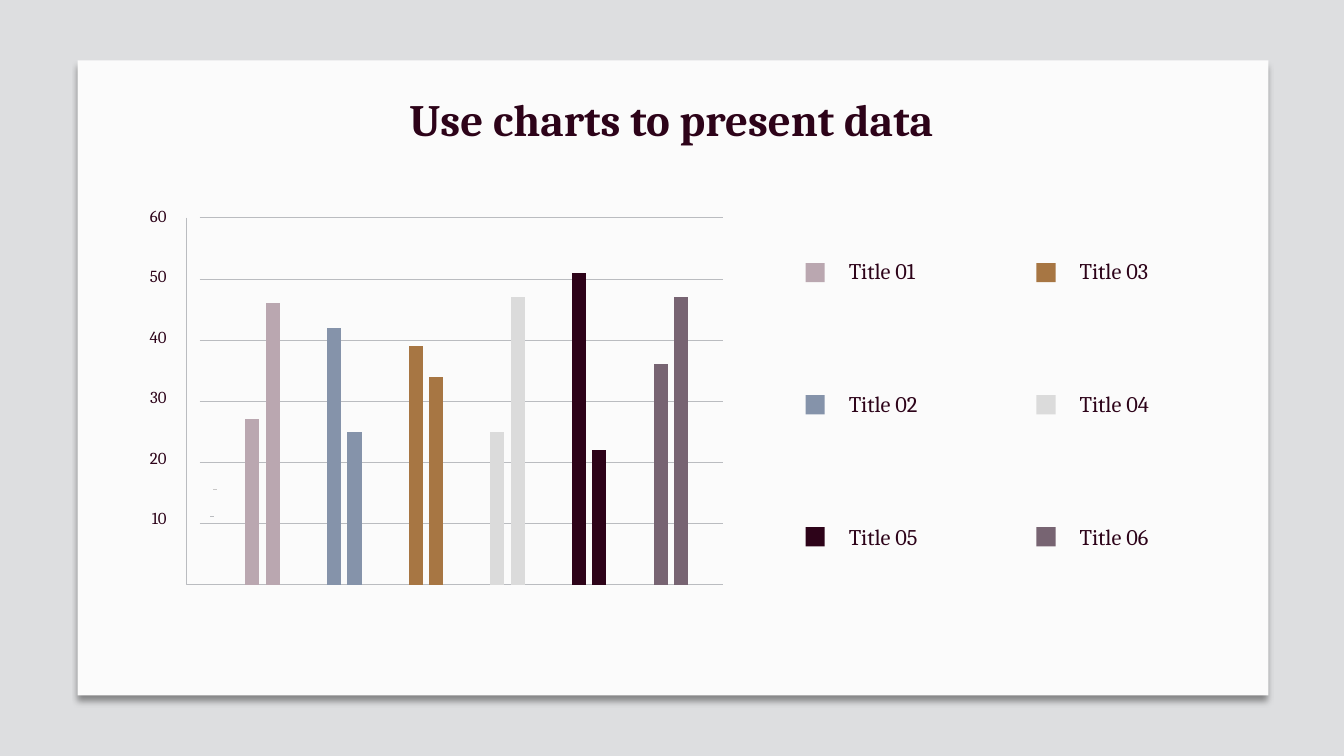
import pptx
import pptx.chart.data
import pptx.dml.color
import pptx.enum.chart
import pptx.enum.shapes
import pptx.enum.text
import pptx.oxml
import pptx.util
from pptx.util import Inches

FONT = "Cambria"
INK = "2D0319"
RULE = "BABCC0"
NAMESPACES = (
    'xmlns:a="http://schemas.openxmlformats.org/drawingml/2006/main" '
    'xmlns:c="http://schemas.openxmlformats.org/drawingml/2006/chart"'
)

# Category name, colour, first bar, second bar
CATEGORIES = [
    ("Title 01", "BAA7B0", 27, 46),
    ("Title 02", "8593AA", 42, 25),
    ("Title 03", "A77643", 39, 34),
    ("Title 04", "DBDBDB", 25, 47),
    ("Title 05", "2D0319", 51, 22),
    ("Title 06", "776472", 36, 47),
]
LEGEND_ROWS = [("Title 01", "Title 03"), ("Title 02", "Title 04"), ("Title 05", "Title 06")]

# Plot frame, in inches
AXIS_X, GRID_X, RIGHT_X = 1.85, 1.98, 7.17
TOP_Y, BASE_Y = 2.16, 5.8
SCALE_MAX, SCALE_STEP = 60, 10


def paint(fill, colour):
    fill.solid()
    fill.fore_color.rgb = pptx.dml.color.RGBColor.from_string(colour)


def xml(text):
    """Parse one element, given with a space where its namespaces go."""
    return pptx.oxml.parse_xml(text.replace("NS", NAMESPACES, 1))


def add_rectangle(page, left, top, width, height, colour):
    box = page.shapes.add_shape(
        pptx.enum.shapes.MSO_SHAPE.RECTANGLE,
        Inches(left), Inches(top), Inches(width), Inches(height))
    box.shadow.inherit = False
    paint(box.fill, colour)
    box.line.fill.background()
    return box


def add_line(page, start, end, colour, points):
    line = page.shapes.add_connector(
        pptx.enum.shapes.MSO_CONNECTOR.STRAIGHT, *map(Inches, start + end))
    paint(line.line.fill, colour)
    line.line.width = pptx.util.Pt(points)
    line._element.spPr.append(xml("<a:effectLst NS/>"))


def write(box, text, size, align, bold=False):
    para = box.text_frame.paragraphs[0]
    para.text = text
    para.alignment = align
    para.font.name = FONT
    para.font.size = pptx.util.Pt(size)
    para.font.bold = bold
    para.font.color.rgb = pptx.dml.color.RGBColor.from_string(INK)


def add_label(page, left, top, width, height, text, size, align):
    box = page.shapes.add_textbox(Inches(left), Inches(top), Inches(width), Inches(height))
    box.text_frame.word_wrap = True
    write(box, text, size, align)


def add_card(page):
    card = add_rectangle(page, 0.77, 0.6, 11.81, 6.3, "FBFBFB")
    effects = card._element.spPr.find(pptx.oxml.ns.qn("a:effectLst"))
    effects.append(xml(
        '<a:outerShdw NS blurRad="50800" dist="63500" dir="5400000" algn="t" rotWithShape="0">'
        '<a:srgbClr val="000000"><a:alpha val="40000"/></a:srgbClr></a:outerShdw>'))


def add_title(page):
    title = page.shapes.title
    title.left, title.top = Inches(3.99), Inches(0.91)
    title.width, title.height = Inches(5.34), Inches(0.54)
    frame = title.text_frame
    frame.margin_left = frame.margin_right = frame.margin_top = frame.margin_bottom = 0
    frame.vertical_anchor = pptx.enum.text.MSO_ANCHOR.MIDDLE
    frame.auto_size = pptx.enum.text.MSO_AUTO_SIZE.NONE
    frame.word_wrap = False
    write(title, "Use charts to present data", 32, pptx.enum.text.PP_ALIGN.CENTER, True)


def add_scale(page):
    # Grid lines and their values
    for value in range(SCALE_STEP, SCALE_MAX + 1, SCALE_STEP):
        y = BASE_Y - (BASE_Y - TOP_Y) * value / SCALE_MAX
        add_line(page, (GRID_X, y), (RIGHT_X, y), RULE, 0.31)
        label_top = 5.59 - 0.6 * value / SCALE_STEP
        add_label(page, 1.15, label_top, 0.6, 0.3, str(value), 12,
                  pptx.enum.text.PP_ALIGN.RIGHT)

    # Small dashes near the axis
    add_line(page, (2.12, 5.12), (2.08, 5.12), RULE, 0.45)
    add_line(page, (2.15, 4.85), (2.11, 4.85), "C8C7C7", 0.45)

    # Axes
    builder = page.shapes.build_freeform(Inches(AXIS_X), Inches(TOP_Y))
    builder.add_line_segments(
        [(Inches(AXIS_X), Inches(BASE_Y)), (Inches(RIGHT_X), Inches(BASE_Y))], close=False)
    axes = builder.convert_to_shape()
    axes.shadow.inherit = False
    axes.fill.background()
    paint(axes.line.fill, RULE)
    axes.line.width = pptx.util.Pt(0.25)


def fill_whole_frame(chart):
    """Let the plot take the whole chart frame, without a background."""
    space = chart._chartSpace
    plot_area = space.chart.plotArea
    for layout in plot_area.findall(pptx.oxml.ns.qn("c:layout")):
        plot_area.remove(layout)
    plot_area.insert(0, xml(
        '<c:layout NS><c:manualLayout><c:layoutTarget val="inner"/>'
        '<c:xMode val="edge"/><c:yMode val="edge"/><c:x val="0"/><c:y val="0"/>'
        '<c:w val="1"/><c:h val="1"/></c:manualLayout></c:layout>'))
    clear = "<c:spPr NS><a:noFill/><a:ln><a:noFill/></a:ln></c:spPr>"
    plot_area.append(xml(clear))
    space.chart.addnext(xml(clear))


def add_bars(page):
    names, colours, first, second = zip(*CATEGORIES)
    data = pptx.chart.data.CategoryChartData()
    data.categories = names
    data.add_series("Series 1", first)
    data.add_series("Series 2", second)
    chart = page.shapes.add_chart(
        pptx.enum.chart.XL_CHART_TYPE.COLUMN_CLUSTERED,
        Inches(2.2), Inches(TOP_Y), Inches(4.86), Inches(BASE_Y - TOP_Y), data).chart
    chart.has_title = False
    chart.has_legend = False
    chart.font.name = FONT
    chart.font.size = pptx.util.Pt(12)
    chart.font.color.rgb = pptx.dml.color.RGBColor.from_string(INK)

    chart.value_axis.minimum_scale = 0
    chart.value_axis.maximum_scale = SCALE_MAX
    chart.value_axis.major_unit = SCALE_STEP
    chart.value_axis.has_major_gridlines = False
    chart.value_axis.visible = False
    chart.category_axis.visible = False

    plot = chart.plots[0]
    plot.vary_by_categories = False
    plot.gap_width = 336
    plot.overlap = -45
    for series in plot.series:
        for index, colour in enumerate(colours):
            paint(series.points[index].format.fill, colour)
    fill_whole_frame(chart)


def add_legend(page):
    colours = {name: colour for name, colour, *_ in CATEGORIES}
    for row, names in enumerate(LEGEND_ROWS):
        for column, name in enumerate(names):
            left = 7.99 + 2.29 * column
            add_rectangle(page, left, 2.61 + 1.31 * row, 0.19, 0.19, colours[name])
            add_label(page, left + 0.33, 2.5 + 1.32 * row, 1, 0.37, name, 16,
                      pptx.enum.text.PP_ALIGN.LEFT)


def main():
    deck = pptx.Presentation()
    deck.slide_width, deck.slide_height = Inches(13.33), Inches(7.5)
    page = deck.slides.add_slide(deck.slide_layouts[5])
    paint(page.background.fill, "DDDEE0")

    add_card(page)
    # Bring the title in front of the card
    page.shapes._spTree.append(page.shapes.title._element)
    add_title(page)
    add_scale(page)
    add_bars(page)
    add_legend(page)
    deck.save("out.pptx")


if __name__ == "__main__":
    main()
